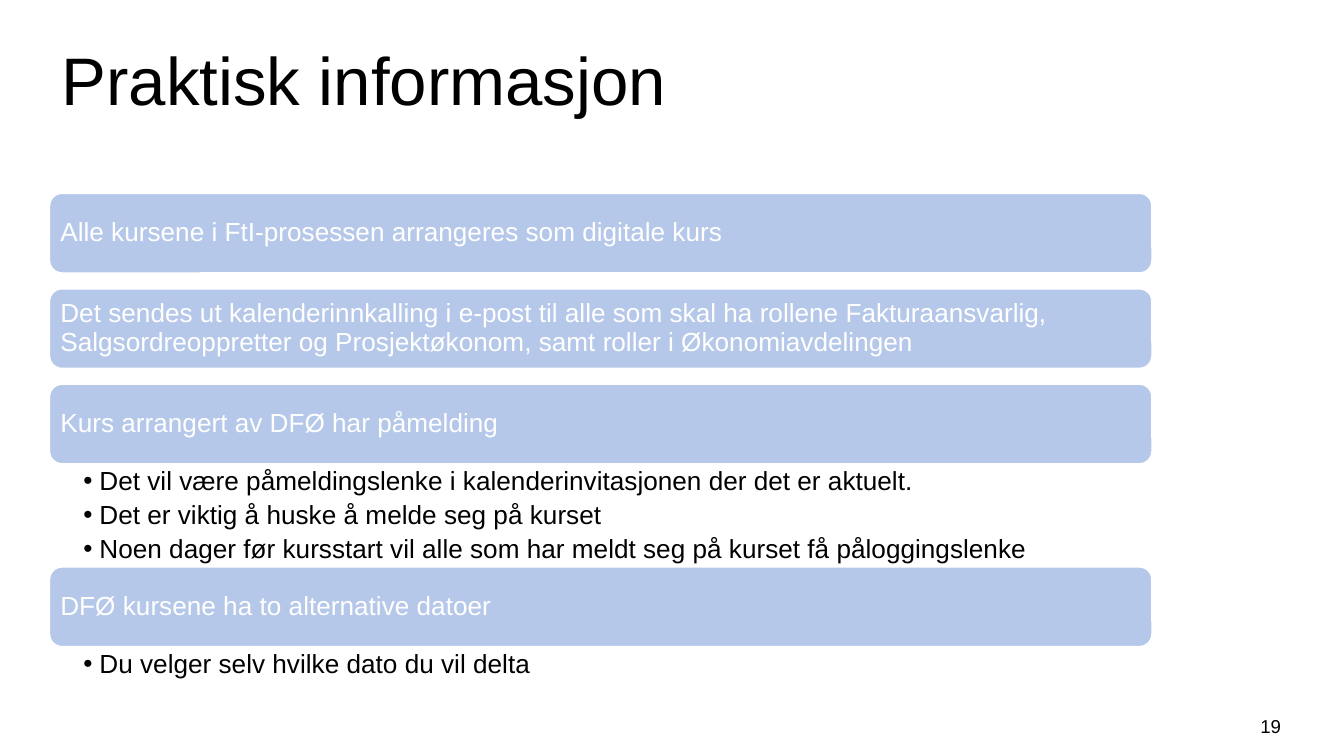
from lxml import etree
from pptx import Presentation
from pptx.dml.color import RGBColor
from pptx.enum.shapes import MSO_SHAPE
from pptx.enum.text import MSO_ANCHOR, PP_ALIGN
from pptx.oxml.ns import qn
from pptx.util import Inches, Pt

ROUNDED = MSO_SHAPE.ROUNDED_RECTANGLE
TOP, MIDDLE = MSO_ANCHOR.TOP, MSO_ANCHOR.MIDDLE
LEFT_ALIGN, CENTER = PP_ALIGN.LEFT, PP_ALIGN.CENTER

BLACK = RGBColor(0x00, 0x00, 0x00)
WHITE = RGBColor(0xFF, 0xFF, 0xFF)
LIGHT_BLUE = RGBColor(0xB6, 0xC8, 0xE9)

TITLE = "Praktisk informasjon"
PAGE_NUMBER = "19"
SECTIONS = [
    ("Alle kursene i FtI-prosessen arrangeres som digitale kurs", [], 0),
    ("Det sendes ut kalenderinnkalling i e-post til alle som skal ha rollene "
     "Fakturaansvarlig, Salgsordreoppretter og Prosjektøkonom, samt roller i "
     "Økonomiavdelingen", [], 0),
    ("Kurs arrangert av DFØ har påmelding", [
        "Det vil være påmeldingslenke i kalenderinvitasjonen der det er aktuelt.",
        "Det er viktig å huske å melde seg på kurset",
        "Noen dager før kursstart vil alle som har meldt seg på kurset få påloggingslenke",
    ], 0.75),
    ("DFØ kursene ha to alternative datoer",
     ["Du velger selv hvilke dato du vil delta"], 0.54),
]

LEFT, WIDTH = 0.36, 8.22
FIRST_TOP, BAR_HEIGHT, GAP = 1.43, 0.61, 0.1
BULLET_INDENT = 0.12


def add_bullet(paragraph, size):
    paragraph.space_after = Pt(3)
    properties = paragraph._p.get_or_add_pPr()
    properties.set("marL", str(Inches(BULLET_INDENT)))
    properties.set("indent", str(-Inches(BULLET_INDENT)))
    etree.SubElement(properties, qn("a:buFont")).set("typeface", "Arial")
    etree.SubElement(properties, qn("a:buChar")).set("char", "•")
    etree.SubElement(paragraph._p, qn("a:endParaRPr")).set("sz", str(size * 100))


def fill_text(shape, lines, size, color, anchor=TOP, insets=(0.1, 0.05, 0.1, 0.05),
              align=LEFT_ALIGN, spacing=1.0, bullets=False):
    frame = shape.text_frame
    frame.word_wrap = True
    frame.vertical_anchor = anchor
    (frame.margin_left, frame.margin_top,
     frame.margin_right, frame.margin_bottom) = map(Inches, insets)
    frame.text = "\n".join(lines)
    for paragraph in frame.paragraphs:
        paragraph.alignment = align
        paragraph.line_spacing = spacing
        if bullets:
            add_bullet(paragraph, size)
        paragraph.font.name = "Arial"
        paragraph.font.size = Pt(size)
        paragraph.font.color.rgb = color


def add_text(slide, box, lines, size, **options):
    shape = slide.shapes.add_textbox(*map(Inches, box))
    fill_text(shape, lines, size, BLACK, **options)


def add_bar(slide, top, text):
    bar = slide.shapes.add_shape(
        ROUNDED, *map(Inches, (LEFT, top, WIDTH, BAR_HEIGHT)))
    bar.shadow.inherit = False
    bar.fill.solid()
    bar.fill.fore_color.rgb = LIGHT_BLUE
    bar.line.color.rgb = WHITE
    bar.line.width = Pt(2)
    fill_text(bar, [text], 14, WHITE, anchor=MIDDLE,
              insets=(0.06, 0.06, 0.06, 0.06), spacing=0.9)


def main():
    presentation = Presentation()
    presentation.slide_width = Inches(10)
    presentation.slide_height = presentation.slide_width * 9 // 16
    slide = presentation.slides.add_slide(presentation.slide_layouts[6])

    add_text(slide, (LEFT, 0.23, 9.17, 0.71), [TITLE], 36, anchor=MIDDLE)
    top = FIRST_TOP
    for heading, bullets, bullets_height in SECTIONS:
        add_bar(slide, top, heading)
        top += BAR_HEIGHT
        if bullets:
            add_text(slide, (LEFT, top, WIDTH, bullets_height), bullets, 14,
                     insets=(0.26, 0.02, 0.11, 0.02), spacing=0.9, bullets=True)
            top += bullets_height
        else:
            top += GAP
    add_text(slide, (9.27, 5.27, 0.37, 0.3), [PAGE_NUMBER], 10, align=CENTER)

    presentation.save("out.pptx")


if __name__ == "__main__":
    main()
